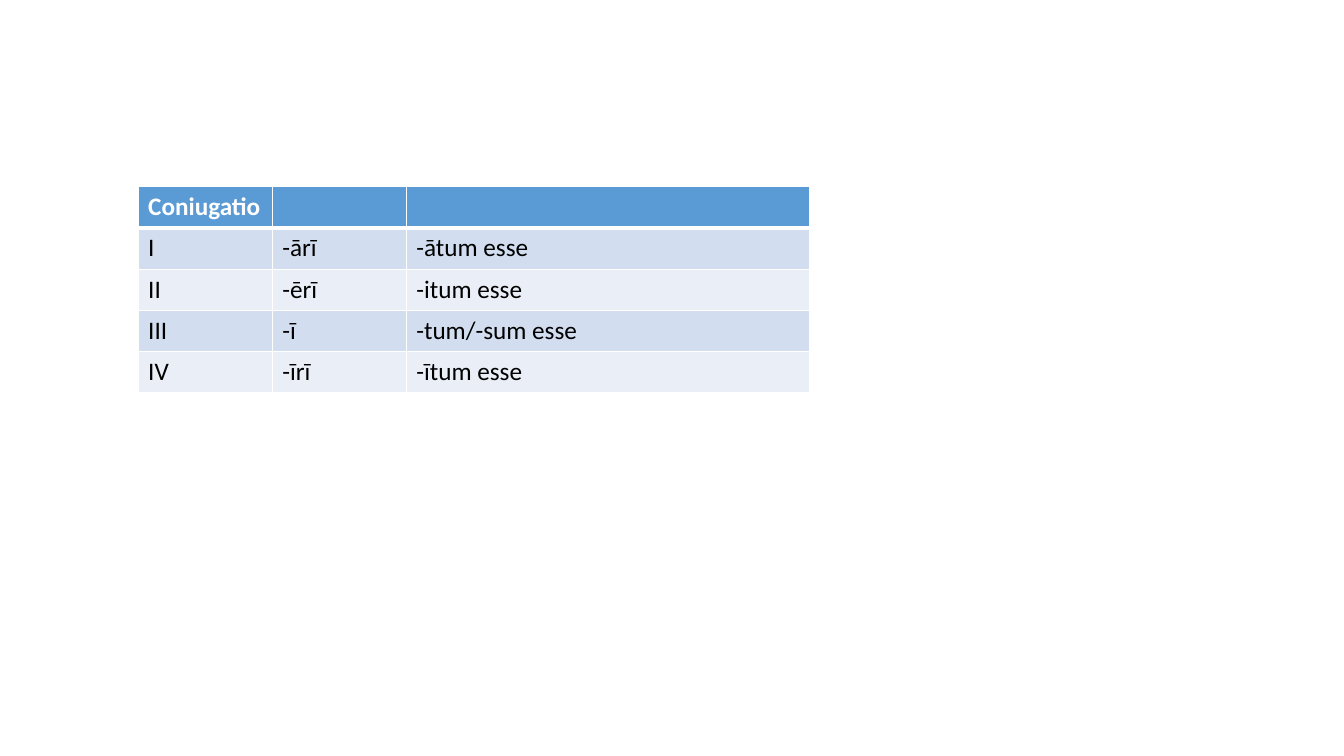
from dataclasses import dataclass

import lxml.etree
import pptx
import pptx.dml.color
import pptx.oxml.ns
import pptx.presentation
import pptx.slide
import pptx.table
import pptx.util

WHITE = pptx.dml.color.RGBColor(0xFF, 0xFF, 0xFF)
BLACK = pptx.dml.color.RGBColor(0x00, 0x00, 0x00)
HEADER_BLUE = pptx.dml.color.RGBColor(0x5B, 0x9B, 0xD5)
BAND_DARK = pptx.dml.color.RGBColor(0xD2, 0xDE, 0xEF)
BAND_LIGHT = pptx.dml.color.RGBColor(0xEA, 0xEF, 0xF7)

COLUMN_WIDTHS = (1.33, 1.33, 4)
ROW_HEIGHT = 0.41
THIN, THICK = 1, 3


@dataclass(frozen=True)
class Conjugation:
    number: str
    infinitive: str
    perfect: str


@dataclass(frozen=True)
class RowStyle:
    fill: pptx.dml.color.RGBColor
    text: pptx.dml.color.RGBColor
    bold: bool
    top: int
    bottom: int


HEADER = Conjugation("Coniugatio", "", "")
CONJUGATIONS = (
    Conjugation("I", "-ārī", "-ātum esse"),
    Conjugation("II", "-ērī", "-itum esse"),
    Conjugation("III", "-ī", "-tum/-sum esse"),
    Conjugation("IV", "-īrī", "-ītum esse"),
)


def row_style(index: int) -> RowStyle:
    if index == 0:
        return RowStyle(HEADER_BLUE, WHITE, True, THIN, THICK)
    band = BAND_DARK if index % 2 else BAND_LIGHT
    return RowStyle(band, BLACK, False, THICK if index == 1 else THIN, THIN)


def add_border(cell: pptx.table._Cell, side: str, points: int) -> None:
    qn = pptx.oxml.ns.qn
    properties = cell._tc.get_or_add_tcPr()
    line = lxml.etree.SubElement(properties, qn(f"a:ln{side}"), w=str(pptx.util.Pt(points)))
    fill = lxml.etree.SubElement(line, qn("a:solidFill"))
    lxml.etree.SubElement(fill, qn("a:srgbClr"), val=str(WHITE))


def fill_cell(cell: pptx.table._Cell, text: str, style: RowStyle) -> None:
    borders = {"L": THIN, "R": THIN, "T": style.top, "B": style.bottom}
    for side, points in borders.items():
        add_border(cell, side, points)
    cell.fill.solid()
    cell.fill.fore_color.rgb = style.fill
    para = cell.text_frame.paragraphs[0]
    para.text = text
    for span in para.runs:
        span.font.name = "Calibri"
        span.font.size = pptx.util.Pt(18)
        span.font.bold = style.bold
        span.font.color.rgb = style.text


def add_conjugation_table(page: pptx.slide.Slide) -> None:
    rows = (HEADER, *CONJUGATIONS)
    table = page.shapes.add_table(
        len(rows),
        len(COLUMN_WIDTHS),
        pptx.util.Inches(1.37),
        pptx.util.Inches(1.85),
        pptx.util.Inches(sum(COLUMN_WIDTHS)),
        pptx.util.Inches(ROW_HEIGHT * len(rows)),
    ).table
    for column, width in zip(table.columns, COLUMN_WIDTHS):
        column.width = pptx.util.Inches(width)
    for index, row in enumerate(rows):
        table.rows[index].height = pptx.util.Inches(ROW_HEIGHT)
        texts = (row.number, row.infinitive, row.perfect)
        for cell, text in zip(table.rows[index].cells, texts):
            fill_cell(cell, text, row_style(index))


def main() -> None:
    deck = pptx.Presentation()
    deck.slide_width = pptx.util.Inches(13.33)
    deck.slide_height = pptx.util.Inches(7.5)
    page = deck.slides.add_slide(deck.slide_layouts[6])
    add_conjugation_table(page)
    deck.save("out.pptx")


if __name__ == "__main__":
    main()
